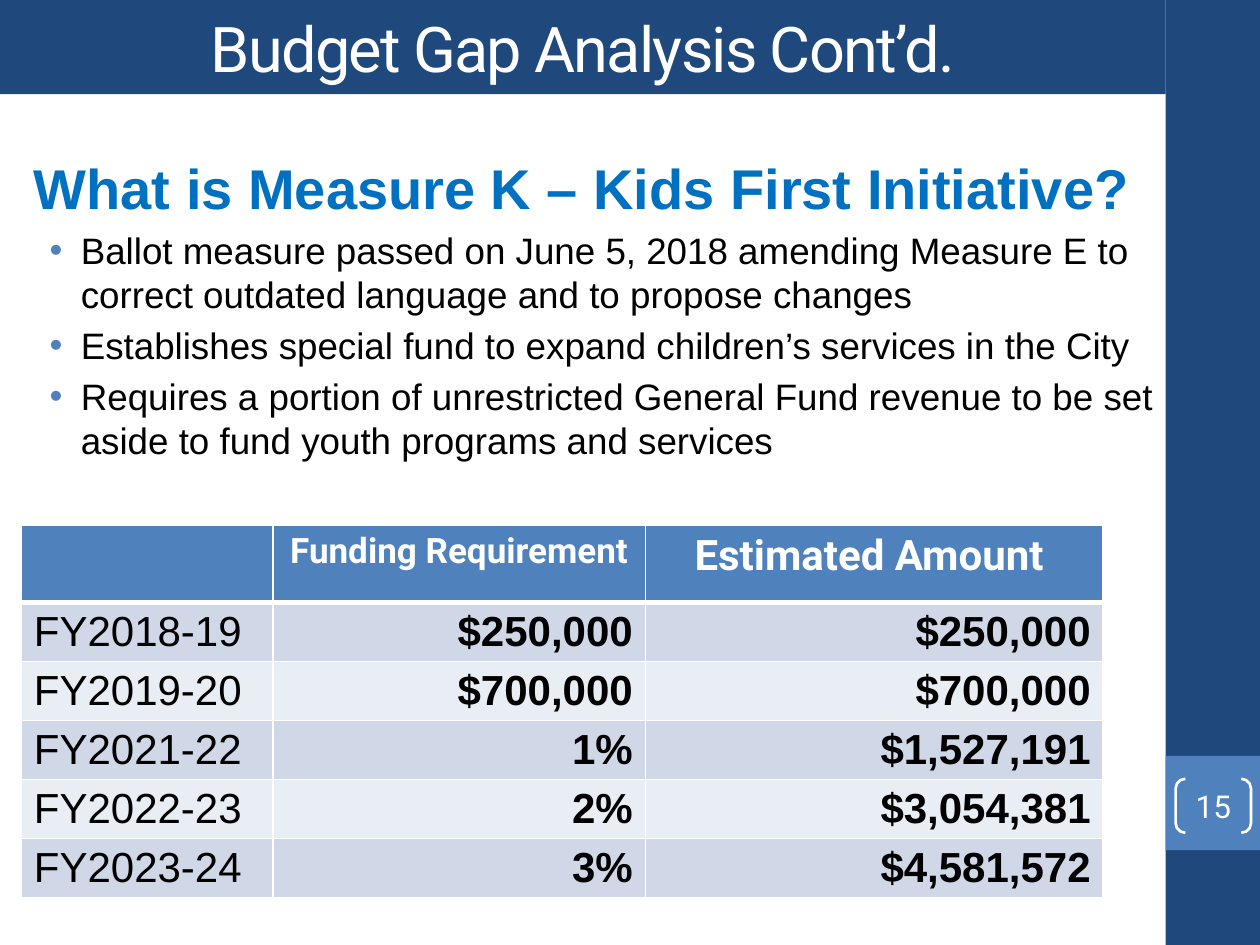
from dataclasses import dataclass
from typing import Any, Optional

from lxml.etree import SubElement
from pptx import Presentation
from pptx.dml.color import RGBColor
from pptx.enum.shapes import MSO_SHAPE
from pptx.enum.text import MSO_ANCHOR, PP_ALIGN
from pptx.oxml.ns import qn
from pptx.util import Cm, Pt

COLORS = {
    "navy": "1F497D",
    "blue": "4F81BD",
    "heading": "0070C0",
    "band": "D0D8E8",
    "light": "E9EDF4",
    "white": "FFFFFF",
    "black": "000000",
}


@dataclass(frozen=True)
class Box:
    left: float
    top: float
    width: float
    height: float

    def lengths(self) -> tuple[Cm, ...]:
        return tuple(Cm(v) for v in (self.left, self.top, self.width, self.height))


@dataclass(frozen=True)
class Style:
    size: float
    font: str
    color: str
    bold: bool = False
    align: PP_ALIGN = PP_ALIGN.LEFT


@dataclass(frozen=True)
class Panel:
    box: Box
    color: str


@dataclass(frozen=True)
class FundingYear:
    year: str
    requirement: str
    amount: str


SIDEBAR = Panel(Box(23.5, 0, 1.9, 19.05), "navy")
NUMBER_TILE = Panel(Box(23.5, 15.24, 1.9, 1.9), "blue")
TITLE_BAR = Panel(Box(0, 0, 23.5, 1.9), "navy")
NUMBER_BOX = Box(23.7, 15.7, 1.52, 1.09)
BODY_BOX = Box(0.43, 2.97, 23.62, 6.99)
TABLE_BOX = Box(0.43, 10.59, 21.81, 7.53)

TITLE_STYLE = Style(36, "Roboto", "white", align=PP_ALIGN.CENTER)
NUMBER_STYLE = Style(18, "Roboto", "white", align=PP_ALIGN.CENTER)
HEADING_STYLE = Style(32, "Arial", "heading", bold=True)
POINT_STYLE = Style(21, "Arial", "black")
YEAR_STYLE = Style(24, "Arial", "black")
VALUE_STYLE = Style(24, "Arial", "black", bold=True, align=PP_ALIGN.RIGHT)

POINTS = [
    "Ballot measure passed on June 5, 2018 amending Measure E to correct outdated language and to propose changes",
    "Establishes special fund to expand children’s services in the City",
    "Requires a portion of unrestricted General Fund revenue to be set aside to fund youth programs and services",
]
HEADERS = [("", 20), ("Funding Requirement", 20), ("Estimated Amount ", 24)]
FUNDING = [
    FundingYear("FY2018-19", "$250,000", "$250,000"),
    FundingYear("FY2019-20", "$700,000", "$700,000"),
    FundingYear("FY2021-22", "1%", "$1,527,191"),
    FundingYear("FY2022-23", "2%", "$3,054,381"),
    FundingYear("FY2023-24", "3%", "$4,581,572"),
]
COLUMN_WIDTHS = [5.07, 7.51, 9.23]
HEADER_HEIGHT, YEAR_HEIGHT = 1.55, 1.19


def rgb(name: str) -> RGBColor:
    return RGBColor.from_string(COLORS[name])


def apply_format(target: Any, values: dict[str, Any]) -> None:
    for key, value in values.items():
        setattr(target, key, value)


def write(paragraph: Any, text: str, style: Style) -> Any:
    paragraph.alignment = style.align
    run = paragraph.add_run()
    run.text = text
    apply_format(run.font, {"size": Pt(style.size), "name": style.font, "bold": style.bold})
    run.font.color.rgb = rgb(style.color)
    return run


def add_panel(slide: Any, panel: Panel) -> Any:
    shape = slide.shapes.add_shape(MSO_SHAPE.RECTANGLE, *panel.box.lengths())
    shape.shadow.inherit = False
    shape.fill.solid()
    shape.fill.fore_color.rgb = rgb(panel.color)
    shape.line.fill.background()
    return shape


def add_title(slide: Any, text: str) -> None:
    frame = add_panel(slide, TITLE_BAR).text_frame
    apply_format(frame, {"vertical_anchor": MSO_ANCHOR.MIDDLE, "word_wrap": True})
    run = write(frame.paragraphs[0], text, TITLE_STYLE)
    run.font._element.set("spc", "-100")


def add_page_number(slide: Any, number: str) -> None:
    bracket = slide.shapes.add_shape(MSO_SHAPE.DOUBLE_BRACKET, *NUMBER_BOX.lengths())
    bracket.shadow.inherit = False
    bracket.adjustments[0] = 0.18
    bracket.fill.background()
    bracket.line.color.rgb = rgb("white")
    bracket.line.width = Pt(1.5)
    margins = {f"margin_{side}": 0 for side in ("left", "top", "right", "bottom")}
    apply_format(bracket.text_frame, {"vertical_anchor": MSO_ANCHOR.MIDDLE, **margins})
    write(bracket.text_frame.paragraphs[0], number, NUMBER_STYLE)


def add_bullet(paragraph: Any) -> None:
    props = paragraph._p.get_or_add_pPr()
    props.set("marL", str(Cm(0.95)))
    props.set("indent", str(Cm(-0.63)))
    bullet_color = SubElement(props, qn("a:buClr"))
    SubElement(bullet_color, qn("a:srgbClr"), val=COLORS["blue"])
    SubElement(props, qn("a:buFont"), typeface="Arial")
    SubElement(props, qn("a:buChar"), char="•")


def add_body(slide: Any, heading: str, points: list[str]) -> None:
    frame = slide.shapes.add_textbox(*BODY_BOX.lengths()).text_frame
    frame.word_wrap = True
    write(frame.paragraphs[0], heading, HEADING_STYLE)
    for point in points:
        write(frame.add_paragraph(), point, POINT_STYLE)
    for paragraph in frame.paragraphs:
        paragraph.space_before = Pt(4)
    for paragraph in frame.paragraphs[1:]:
        add_bullet(paragraph)


def add_borders(cell: Any, top: float, bottom: float) -> None:
    props = cell._tc.get_or_add_tcPr()
    widths = {"lnL": 1, "lnR": 1, "lnT": top, "lnB": bottom}
    for position, (tag, width) in enumerate(widths.items()):
        border = SubElement(props, qn(f"a:{tag}"), w=str(Pt(width)))
        fill = SubElement(border, qn("a:solidFill"))
        SubElement(fill, qn("a:srgbClr"), val=COLORS["white"])
        props.insert(position, border)


def fill_cell(cell: Any, text: str, style: Style, color: str,
              top: float = 1, bottom: float = 1) -> None:
    cell.fill.solid()
    cell.fill.fore_color.rgb = rgb(color)
    apply_format(cell, {"margin_top": Cm(0.12), "margin_bottom": Cm(0.08)})
    add_borders(cell, top, bottom)
    if text:
        write(cell.text_frame.paragraphs[0], text, style)


def add_funding_table(slide: Any, years: list[FundingYear]) -> None:
    table = slide.shapes.add_table(
        len(years) + 1, len(HEADERS), *TABLE_BOX.lengths()).table
    for column, width in zip(table.columns, COLUMN_WIDTHS):
        column.width = Cm(width)
    for row in table.rows:
        row.height = Cm(YEAR_HEIGHT)
    table.rows[0].height = Cm(HEADER_HEIGHT)
    for column, (label, size) in enumerate(HEADERS):
        style = Style(size, "Roboto", "white", bold=True, align=PP_ALIGN.CENTER)
        fill_cell(table.cell(0, column), label, style, "blue", bottom=3)
    for row, entry in enumerate(years, start=1):
        color = "band" if row % 2 else "light"
        values = (entry.year, entry.requirement, entry.amount)
        for column, value in enumerate(values):
            style = VALUE_STYLE if column else YEAR_STYLE
            fill_cell(table.cell(row, column), value, style, color, top=3 if row == 1 else 1)


def main(page: Optional[str] = "15") -> None:
    deck = Presentation()
    apply_format(deck, {"slide_width": Cm(25.4), "slide_height": Cm(19.05)})
    slide = deck.slides.add_slide(deck.slide_layouts[6])
    for panel in (SIDEBAR, NUMBER_TILE):
        add_panel(slide, panel)
    add_title(slide, "Budget Gap Analysis Cont’d.")
    add_page_number(slide, page)
    add_funding_table(slide, FUNDING)
    add_body(slide, "What is Measure K – Kids First Initiative?", POINTS)
    deck.save("out.pptx")


if __name__ == "__main__":
    main()
